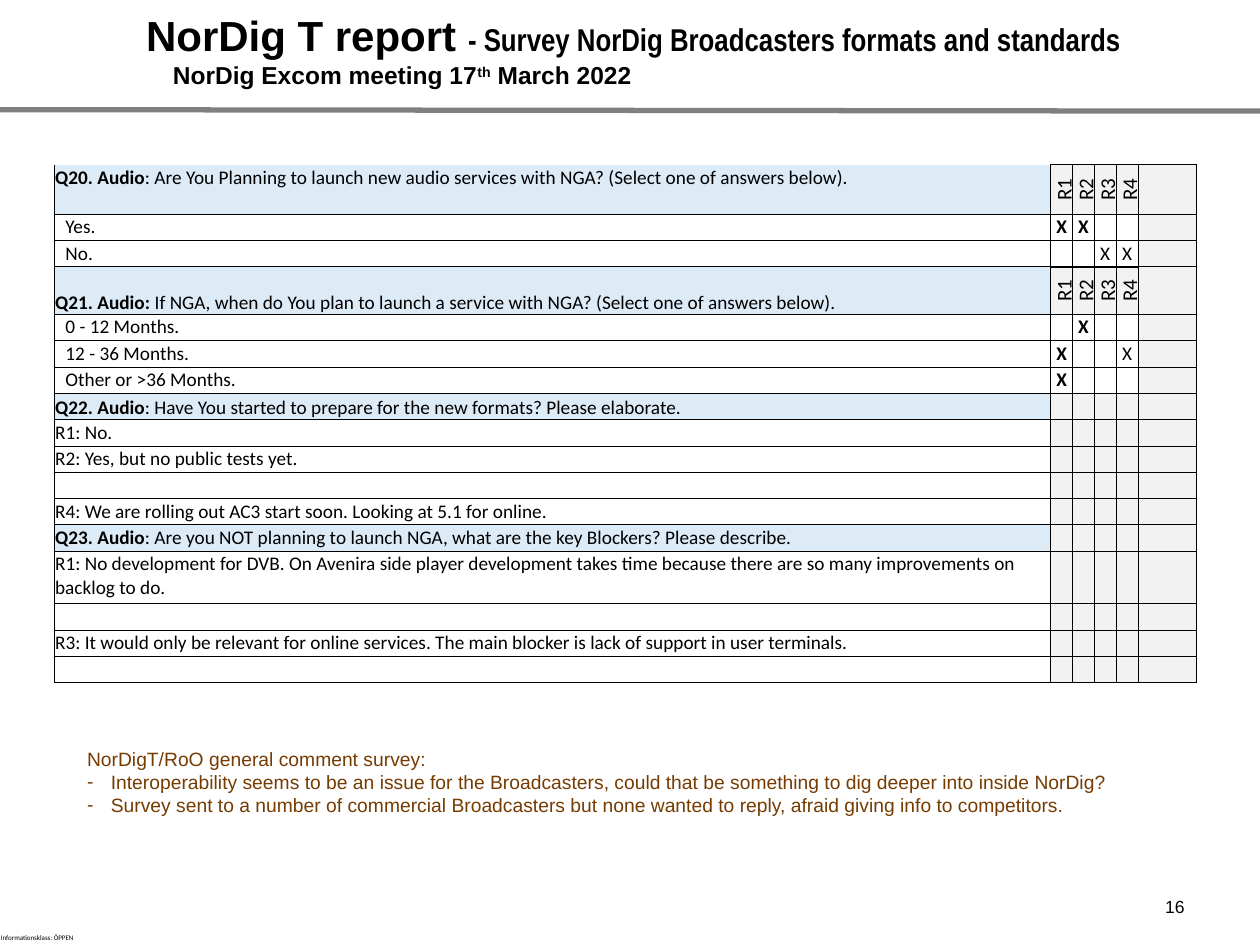
from dataclasses import dataclass

from lxml.etree import SubElement
from pptx import Presentation
from pptx.dml.color import RGBColor
from pptx.enum.shapes import MSO_CONNECTOR
from pptx.enum.text import MSO_ANCHOR, MSO_AUTO_SIZE, PP_ALIGN
from pptx.oxml.ns import qn
from pptx.util import Cm, Pt


@dataclass(frozen=True)
class Theme:
    black: str = "000000"
    rule: str = "808080"
    question: str = "DDEBF7"
    shaded: str = "F2F2F2"
    comment: str = "763B00"
    heading_font: str = "Arial"
    narrow_font: str = "Arial Narrow"
    table_font: str = "Calibri"
    title_size: float = 24
    subject_size: float = 18
    meeting_size: float = 14
    reply_size: float = 12
    body_size: float = 11
    number_size: float = 10
    label_size: float = 4
    thin: float = 0.5
    thick: float = 1


THEME = Theme()

TITLE = "NorDig T report "
SUBJECT = "- Survey NorDig Broadcasters formats and standards"
MEETING = [("NorDig Excom meeting 17", False), ("th", True), (" March 2022", False)]
RESPONDENTS = ["R1", "R2", "R3", "R4"]

# Choice questions: title, wording, row height, anchor, options with those who chose them.
# A bold mark is written with an asterisk.
CHOICE_QUESTIONS = [
    ("Q20. Audio", ": Are You Planning to launch new audio services with NGA? (Select one of answers below).",
     1.0, MSO_ANCHOR.TOP,
     [("Yes.", {"R1": "X*", "R2": "X*"}), ("No.", {"R3": "X", "R4": "X"})]),
    ("Q21. Audio: ", "If NGA, when do You plan to launch a service with NGA? (Select one of answers below).",
     0.96, MSO_ANCHOR.BOTTOM,
     [("0 - 12 Months.", {"R2": "X*"}), ("12 - 36 Months.", {"R1": "X*", "R4": "X"}),
      ("Other or >36 Months.", {"R1": "X*"})]),
]

# Open questions: title, wording, anchor, one answer per respondent.
OPEN_QUESTIONS = [
    ("Q22. Audio", ": Have You started to prepare for the new formats? Please elaborate.",
     MSO_ANCHOR.BOTTOM,
     ["R1: No.", "R2: Yes, but no public tests yet.", "",
      "R4: We are rolling out AC3 start soon. Looking at 5.1 for online."]),
    ("Q23. Audio", ": Are you NOT planning to launch NGA, what are the key Blockers? Please describe.",
     MSO_ANCHOR.TOP,
     ["R1: No development for DVB. On Avenira side player development takes time because there are "
      "so many improvements on backlog to do.", "",
      "R3: It would only be relevant for online services. The main blocker is lack of support in "
      "user terminals.", ""]),
]

COMMENT_HEADING = "NorDigT/RoO general comment survey:"
COMMENTS = [
    "Interoperability seems to be an issue for the Broadcasters, could that be something to dig "
    "deeper into inside NorDig?",
    "Survey sent to a number of commercial Broadcasters but none wanted to reply, afraid giving "
    "info to competitors.",
]

COLUMN_WIDTHS = [20.09] + [0.44] * len(RESPONDENTS) + [1.17]
ROW_HEIGHT = 0.53
LINE_CAPACITY = 115  # characters that fit on one line of the first column


def set_font(font, size, name, color=THEME.black, bold=False):
    font.size, font.name, font.bold = Pt(size), name, bold
    font.color.rgb = RGBColor.from_string(color)


def place(shape, left, top, width, height):
    shape.left, shape.top, shape.width, shape.height = Cm(left), Cm(top), Cm(width), Cm(height)


def add_run(paragraph, text, bold=None):
    run = paragraph.add_run()
    run.text = text
    if bold is not None:
        run.font.bold = bold
    return run


def set_borders(cell, top, bottom):
    """Draw black cell borders; a top of None leaves that edge open."""
    properties = cell._tc.get_or_add_tcPr()
    for edge, weight in (("L", THEME.thin), ("R", THEME.thin), ("T", top), ("B", bottom)):
        border = SubElement(properties, qn(f"a:ln{edge}"), w=str(Pt(weight or 0)))
        if weight is None:
            SubElement(border, qn("a:noFill"))
        else:
            SubElement(SubElement(border, qn("a:solidFill")), qn("a:srgbClr"), val=THEME.black)


def style_cell(cell, runs=(), fill=None, size=THEME.body_size, indent=0.02, anchor=MSO_ANCHOR.TOP,
               align=PP_ALIGN.LEFT, top=THEME.thin, bottom=THEME.thin):
    """Fill one cell; runs are pairs of text and bold."""
    cell.margin_left, cell.margin_right = Cm(indent), Cm(0.02)
    cell.margin_top, cell.margin_bottom = Cm(0.02), 0
    cell.vertical_anchor = anchor
    set_borders(cell, top, bottom)
    if fill:
        cell.fill.solid()
        cell.fill.fore_color.rgb = RGBColor.from_string(fill)
    else:
        cell.fill.background()
    paragraph = cell.text_frame.paragraphs[0]
    paragraph.alignment = align
    set_font(paragraph.font, size, THEME.table_font)
    for text, bold in runs:
        add_run(paragraph, text, bold or None)
    if not runs:
        SubElement(paragraph._p, qn("a:endParaRPr"), sz=str(int(size * 100)))


def survey_rows():
    """List each row as its height, kind, first-cell options and marks."""
    rows = []
    for title, wording, height, anchor, options in CHOICE_QUESTIONS:
        question = dict(runs=[(title, True), (wording, False)], fill=THEME.question, anchor=anchor)
        rows.append((height, "choice", question, {}))
        for option, marks in options:
            rows.append((ROW_HEIGHT, "option", dict(runs=[(option, False)], indent=0.23), marks))
    for title, wording, anchor, answers in OPEN_QUESTIONS:
        question = dict(runs=[(title, True), (wording, False)], fill=THEME.question, anchor=anchor)
        rows.append((ROW_HEIGHT, "open", question, {}))
        for answer in answers:
            lines = 1 + len(answer) // LINE_CAPACITY
            rows.append((lines * ROW_HEIGHT, "open", dict(runs=[(answer, False)] if answer else []), {}))
    return rows


def add_survey_table(slide):
    rows = survey_rows()
    table = slide.shapes.add_table(len(rows), len(COLUMN_WIDTHS), Cm(1.09), Cm(3.32),
                                   Cm(sum(COLUMN_WIDTHS)), Cm(sum(row[0] for row in rows))).table
    table.first_row = table.horz_banding = False
    for column, width in zip(table.columns, COLUMN_WIDTHS):
        column.width = Cm(width)
    for index, (height, kind, first, marks) in enumerate(rows):
        table.rows[index].height = Cm(height)
        before_choice = index + 1 < len(rows) and rows[index + 1][1] == "choice"
        bottom = THEME.thick if before_choice else THEME.thin
        style_cell(table.cell(index, 0), top=THEME.thin if index else None, **first)
        for column, respondent in enumerate(RESPONDENTS, 1):
            cell = table.cell(index, column)
            if kind == "choice":
                style_cell(cell, [(respondent, False)], THEME.shaded, THEME.reply_size,
                           anchor=MSO_ANCHOR.BOTTOM, align=PP_ALIGN.CENTER, top=THEME.thick)
                cell._tc.get_or_add_tcPr().set("vert", "vert270")
            else:
                mark = marks.get(respondent, "")
                style_cell(cell, [(mark[0], mark.endswith("*"))] if mark else [],
                           THEME.shaded if kind == "open" else None,
                           align=PP_ALIGN.CENTER, bottom=bottom)
        style_cell(table.cell(index, len(COLUMN_WIDTHS) - 1), fill=THEME.shaded)


def add_title(slide):
    title = slide.shapes.title
    place(title, 2.69, 0.1, 21.44, 1.8)
    frame = title.text_frame
    frame.auto_size, frame.vertical_anchor = MSO_AUTO_SIZE.NONE, MSO_ANCHOR.MIDDLE
    report, meeting = frame.paragraphs[0], frame.add_paragraph()
    report.alignment = meeting.alignment = PP_ALIGN.LEFT
    set_font(add_run(report, TITLE).font, THEME.title_size, THEME.heading_font, bold=True)
    set_font(add_run(report, SUBJECT).font, THEME.subject_size, THEME.narrow_font, bold=True)
    meeting._p.get_or_add_pPr().set("marL", str(Cm(0.54)))
    set_font(meeting.font, THEME.meeting_size, THEME.heading_font, bold=True)
    for text, raised in MEETING:
        run = add_run(meeting, text)
        if raised:
            run._r.get_or_add_rPr().set("baseline", "30000")


def add_comments(slide):
    body = slide.placeholders[1]
    place(body, 1.5, 14.94, 21.31, 1.68)
    frame = body.text_frame
    frame.auto_size = MSO_AUTO_SIZE.NONE
    for index, text in enumerate([COMMENT_HEADING] + COMMENTS):
        paragraph = frame.add_paragraph() if index else frame.paragraphs[0]
        properties = paragraph._p.get_or_add_pPr()
        hang = Cm(0.48) if index else 0
        properties.set("marL", str(hang))
        properties.set("indent", str(-hang))
        if index:
            SubElement(properties, qn("a:buChar"), char="-")
        else:
            SubElement(properties, qn("a:buNone"))
        paragraph.space_before = Pt(0)
        set_font(paragraph.font, THEME.body_size, THEME.heading_font, THEME.comment)
        add_run(paragraph, text)


def add_label(slide, text, box, size, font, align=PP_ALIGN.LEFT, inset=None):
    label = slide.shapes.add_textbox(*map(Cm, box))
    frame = label.text_frame
    frame.word_wrap = True
    if inset is not None:
        frame.margin_left = frame.margin_right = frame.margin_top = frame.margin_bottom = inset
    paragraph = frame.paragraphs[0]
    paragraph.alignment = align
    set_font(paragraph.font, size, font)
    add_run(paragraph, text)


def add_header_rule(slide):
    rule = slide.shapes.add_connector(MSO_CONNECTOR.STRAIGHT, 0, Cm(2.21), Cm(25.4), Cm(2.24))
    rule.line.color.rgb = RGBColor.from_string(THEME.rule)
    rule.line.width = Pt(3)
    SubElement(rule._element.spPr, qn("a:effectLst"))


def main():
    deck = Presentation()
    deck.slide_width, deck.slide_height = Cm(25.4), Cm(19.05)
    slide = deck.slides.add_slide(deck.slide_layouts[1])
    add_label(slide, "Informationsklass: ÖPPEN", (0.02, 18.82, 3.02, 0.18),
              THEME.label_size, THEME.table_font, inset=0)
    add_header_rule(slide)
    add_title(slide)
    add_label(slide, "16", (18.21, 17.93, 5.92, 0.74), THEME.number_size, THEME.heading_font, PP_ALIGN.RIGHT)
    add_survey_table(slide)
    add_comments(slide)
    deck.save("out.pptx")


if __name__ == "__main__":
    main()
